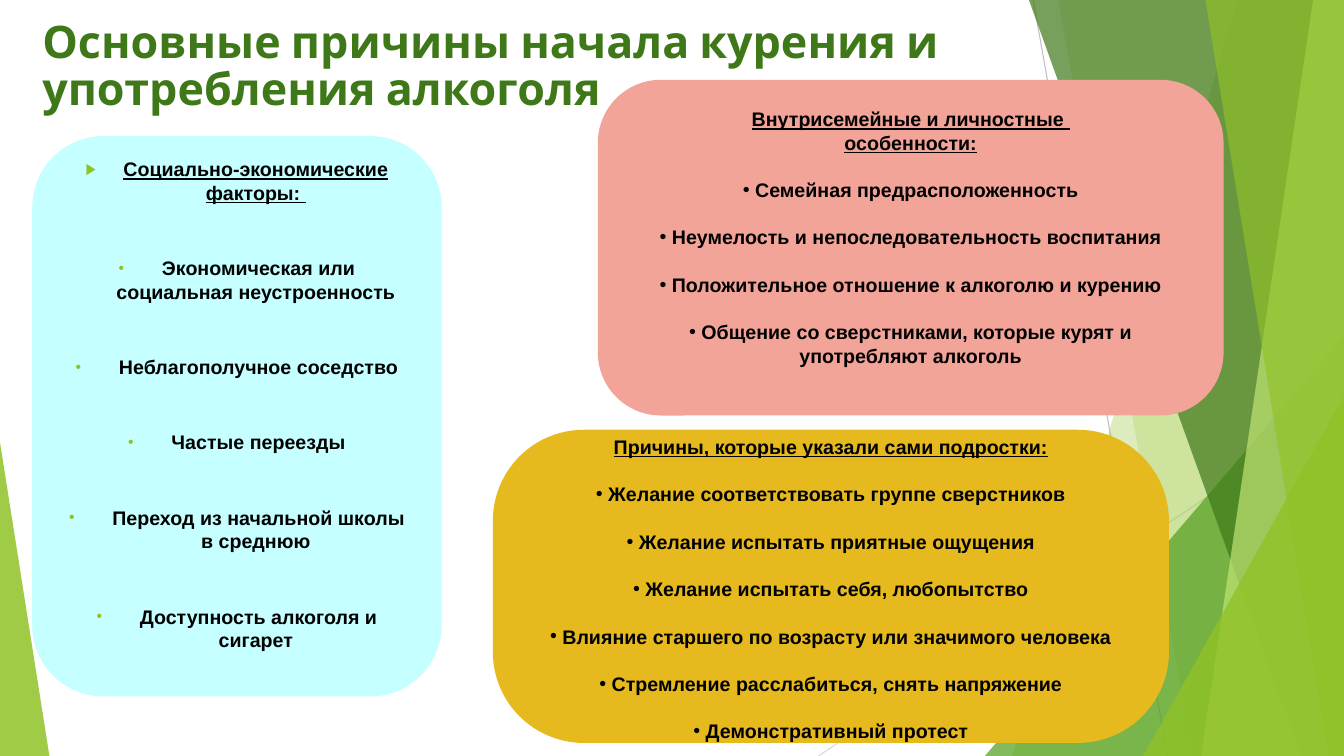
from pptx import Presentation
from pptx.dml.color import RGBColor
from pptx.enum.shapes import MSO_CONNECTOR as Connector, MSO_SHAPE as Preset
from pptx.enum.text import MSO_ANCHOR as Anchor, MSO_AUTO_SIZE as AutoSize, PP_ALIGN as Align
from pptx.oxml.ns import qn
from pptx.util import Pt
from lxml.etree import SubElement

WIDTH, HEIGHT = 960, 540


def paint(shape, color, opacity=100):
    shape.shadow.inherit = False
    shape.line.fill.background()
    shape.fill.solid()
    shape.fill.fore_color.rgb = RGBColor.from_string(color)
    if opacity < 100:
        tint = shape.fill._xPr.find(qn("a:solidFill"))[0]
        SubElement(tint, qn("a:alpha"), val=str(opacity * 1000))


def add_bullet(para, symbol, color, size, indent):
    props = para._p.get_or_add_pPr()
    props.set("marL", str(Pt(indent)))
    props.set("indent", str(-Pt(indent)))
    SubElement(SubElement(props, qn("a:buClr")), qn("a:srgbClr"), val=color)
    SubElement(props, qn("a:buSzPct"), val=str(size * 1000))
    SubElement(props, qn("a:buFont"), typeface="Arial")
    SubElement(props, qn("a:buChar"), char=symbol)


deck = Presentation()
deck.slide_width, deck.slide_height = Pt(WIDTH), Pt(HEIGHT)
page = deck.slides.add_slide(deck.slide_layouts[5])

for x1, y1, x2, y2, color in [
    (738, 0, 834, HEIGHT, "BFBFBF"),
    (WIDTH, 290, 584.6, HEIGHT, "D9D9D9"),
]:
    ray = page.shapes.add_connector(Connector.STRAIGHT, Pt(x1), Pt(y1), Pt(x2), Pt(y2))
    ray.line.color.rgb = RGBColor.from_string(color)
    ray.line.width = Pt(0.75)
    SubElement(ray._element.spPr, qn("a:effectLst"))

backdrop = [
    ("band", (884, 723), "90C226", 30),
    ("band", (756, 852), "90C226", 20),
    ("triangle", (703.5, 240, 256.5, 300, 1), "54A021", 72),
    ("band", (735, 929.5), "3F7819", 70),
    ("band", (938, 858), "C0E474", 70),
    ("band", (861, 949), "90C226", 65),
    ("triangle", (816.5, 283, 143.5, 257, 1), "90C226", 80),
    ("triangle", (0, 316, 35.3, 224, 0), "90C226", 85),
]
for kind, layout, color, opacity in backdrop:
    if kind == "band":
        top_x, bottom_x = layout
        outline = page.shapes.build_freeform(Pt(top_x), 0)
        outline.add_line_segments(
            [(Pt(WIDTH), 0), (Pt(WIDTH), Pt(HEIGHT)), (Pt(bottom_x), Pt(HEIGHT))]
        )
        facet = outline.convert_to_shape()
    else:
        *frame, apex = layout
        facet = page.shapes.add_shape(Preset.ISOSCELES_TRIANGLE, *map(Pt, frame))
        facet.adjustments[0] = apex
    paint(facet, color, opacity)

title = page.shapes.title
title.left, title.top, title.width, title.height = Pt(23), Pt(7.2), Pt(677), Pt(103.7)
frame = title.text_frame
frame.text = "Основные причины начала курения и употребления алкоголя"
frame.word_wrap = True
frame.auto_size = AutoSize.NONE
frame.vertical_anchor = Anchor.TOP
frame.margin_top = Pt(8)
para = frame.paragraphs[0]
para.alignment = Align.LEFT
para.line_spacing = 0.87
para.font.name, para.font.size, para.font.bold = "Cabin", Pt(32), True
para.font.color.rgb = RGBColor.from_string("3F7819")

cards = [
    {
        "box": (23, 97.2, 292.5, 400.3), "round": 0.174, "fill": "C5FFFF",
        "margins": (0, 17), "gap": 37, "bullet": ("90C226", 80, 27), "mark": "▶",
        "heading": ["Социально-экономические факторы: "],
        "items": [
            "Экономическая или социальная неустроенность",
            "Неблагополучное соседство",
            "Частые переезды",
            "Переход из начальной школы в среднюю",
            "Доступность алкоголя и сигарет",
        ],
    },
    {
        "box": (427, 57, 447, 239.8), "round": 0.188, "fill": "F2A499",
        "margins": (0, 15), "gap": 17, "bullet": ("000000", 100, 0), "mark": None,
        "heading": ["Внутрисемейные и личностные ", "особенности:"],
        "items": [
            "Семейная предрасположенность",
            "Неумелость и непоследовательность воспитания",
            "Положительное отношение к алкоголю и курению",
            "Общение со сверстниками, которые курят и употребляют алкоголь",
        ],
    },
    {
        "box": (352, 307, 483, 223.7), "round": 0.291, "fill": "E6B91E",
        "margins": (3.6, 0), "gap": 17, "bullet": ("000000", 100, 0), "mark": None,
        "heading": ["Причины, которые указали сами подростки:"],
        "items": [
            "Желание соответствовать группе сверстников",
            "Желание испытать приятные ощущения",
            "Желание испытать себя, любопытство",
            "Влияние старшего по возрасту или значимого человека",
            "Стремление расслабиться, снять напряжение",
            "Демонстративный протест",
        ],
    },
]
for card in cards:
    box = page.shapes.add_shape(Preset.ROUNDED_RECTANGLE, *map(Pt, card["box"]))
    box.adjustments[0] = card["round"]
    paint(box, card["fill"])
    frame = box.text_frame
    frame.word_wrap = True
    frame.vertical_anchor = Anchor.MIDDLE
    frame.margin_top, frame.margin_bottom = map(Pt, card["margins"])
    heading_count = len(card["heading"])
    for index, text in enumerate(card["heading"] + card["items"]):
        para = frame.paragraphs[0] if index == 0 else frame.add_paragraph()
        is_heading = index < heading_count
        para.alignment = Align.CENTER
        para.space_before = Pt(0 if is_heading else card["gap"])
        mark = card["mark"] if is_heading else "•"
        if mark:
            add_bullet(para, mark, *card["bullet"])
        para.font.name, para.font.size, para.font.bold = "Arial", Pt(14), True
        para.font.underline = is_heading
        para.font.color.rgb = RGBColor.from_string("000000")
        para.add_run().text = text if is_heading else " " + text

deck.save("out.pptx")
